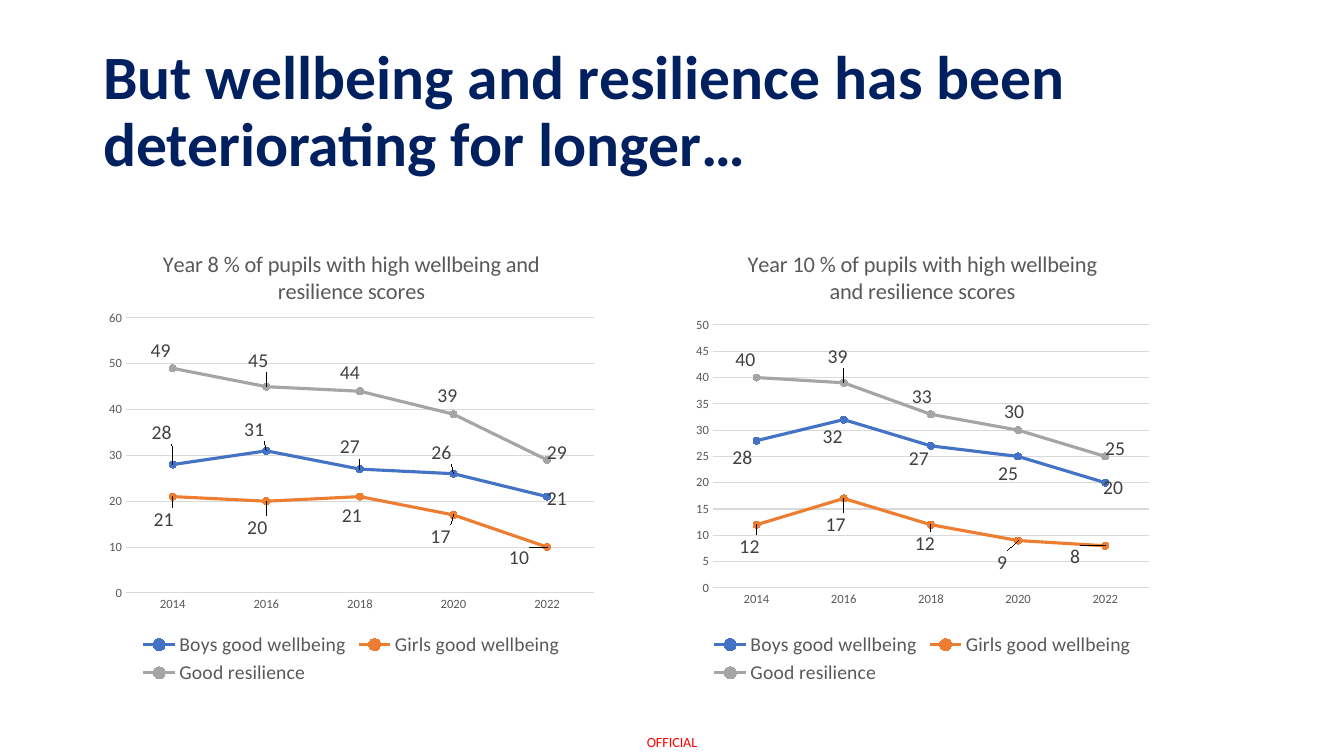
from lxml.etree import SubElement
from pptx import Presentation
from pptx.chart.data import CategoryChartData
from pptx.dml.color import RGBColor
from pptx.enum.chart import (XL_CHART_TYPE, XL_LABEL_POSITION, XL_LEGEND_POSITION,
                             XL_MARKER_STYLE, XL_TICK_MARK)
from pptx.enum.text import MSO_ANCHOR, MSO_AUTO_SIZE, PP_ALIGN
from pptx.oxml.ns import qn
from pptx.util import Emu, Pt

PX = 9071  # EMU per pixel
FONT = "Calibri"
NAVY = RGBColor(0x00, 0x20, 0x60)
RED = RGBColor(0xFF, 0x00, 0x00)
GREY = RGBColor(0x59, 0x59, 0x59)
LABEL_GREY = RGBColor(0x40, 0x40, 0x40)
GRID_GREY = RGBColor(0xD9, 0xD9, 0xD9)

TITLE = "But wellbeing and resilience has been deteriorating for longer…"
TITLE_BOX = (93, 40, 1159, 146)
MARKING = "OFFICIAL"
MARKING_BOX = (632, 727, 80, 29)
YEARS = ["2014", "2016", "2018", "2020", "2022"]
SERIES = [
    ("Boys good wellbeing", RGBColor(0x44, 0x72, 0xC4)),
    ("Girls good wellbeing", RGBColor(0xED, 0x7D, 0x31)),
    ("Good resilience", RGBColor(0xA5, 0xA5, 0xA5)),
]
# "plot" is px inside the chart; "labels" are px shifts of each label from its point
CHARTS = [
    {
        "title": "Year 8 % of pupils with high wellbeing and resilience scores",
        "box": (93, 230, 517, 459),
        "plot": (33, 88, 468, 275),
        "scale": (60, 10),
        "values": [(28, 31, 27, 26, 21), (21, 20, 21, 17, 10), (49, 45, 44, 39, 29)],
        "labels": [
            [(-11, -32), (-12, -21), (-10, -22), (-12, -21), (10, 2)],
            [(-9, 23), (-9, 26), (-8, 19), (-13, 22), (-28, 11)],
            [(-12, -18), (-8, -26), (-10, -19), (-6, -19), (10, -7)],
        ],
    },
    {
        "title": "Year 10 % of pupils with high wellbeing and resilience scores",
        "box": (680, 230, 485, 459),
        "plot": (33, 95, 436, 263),
        "scale": (50, 5),
        "values": [(28, 32, 27, 25, 20), (12, 17, 12, 9, 8), (40, 39, 33, 30, 25)],
        "labels": [
            [(-14, 17), (-11, 17), (-12, 13), (-10, 17), (8, 5)],
            [(-7, 22), (-8, 26), (-6, 19), (-16, 22), (-30, 11)],
            [(-11, -18), (-6, -26), (-9, -18), (-4, -18), (10, -8)],
        ],
    },
]


def to_emu(box):
    return [Emu(length * PX) for length in box]


def style_font(font, size, color, bold=False):
    font.name, font.size, font.bold = FONT, Pt(size), bold
    font.color.rgb = color


def style_line(line, color, width):
    line.color.rgb = color
    line.width = Pt(width)


def add_manual_layout(layout, settings):
    manual = SubElement(layout, qn("c:manualLayout"))
    for name, value in settings.items():
        SubElement(manual, qn(f"c:{name}")).set("val", str(value))


def place_plot(chart, plot, box):
    plot_area = chart.element.find(".//" + qn("c:plotArea"))
    layout = plot_area.find(qn("c:layout"))
    if layout is None:
        layout = SubElement(plot_area, qn("c:layout"))
        plot_area.insert(0, layout)
    left, top, width, height = plot
    add_manual_layout(layout, {
        "layoutTarget": "inner", "xMode": "edge", "yMode": "edge",
        "x": round(left / box[2], 4), "y": round(top / box[3], 4),
        "w": round(width / box[2], 4), "h": round(height / box[3], 4)})


def style_axes(chart, scale):
    for axis in (chart.category_axis, chart.value_axis):
        axis.major_tick_mark = axis.minor_tick_mark = XL_TICK_MARK.NONE
        style_font(axis.tick_labels.font, 9, GREY)
    style_line(chart.category_axis.format.line, GRID_GREY, 0.75)
    value_axis = chart.value_axis
    value_axis.format.line.fill.background()
    value_axis.minimum_scale = 0
    value_axis.maximum_scale, value_axis.major_unit = scale
    style_line(value_axis.major_gridlines.format.line, GRID_GREY, 0.75)


def style_series(series, color, shifts, box):
    series.smooth = False
    style_line(series.format.line, color, 2.25)
    marker = series.marker
    marker.style, marker.size = XL_MARKER_STYLE.CIRCLE, 5
    marker.format.fill.solid()
    marker.format.fill.fore_color.rgb = color
    style_line(marker.format.line, color, 0.75)

    series.data_labels.show_value = True
    style_font(series.data_labels.font, 14, LABEL_GREY)
    for index in range(len(shifts)):
        label = series.points[index].data_label
        style_font(label.font, 14, LABEL_GREY)
        label.position = XL_LABEL_POSITION.CENTER
    for label_element, (right, down) in zip(series.data_labels._element.findall(qn("c:dLbl")), shifts):
        layout = SubElement(label_element, qn("c:layout"))
        label_element.insert(1, layout)
        add_manual_layout(layout, {"x": round(right / box[2], 4), "y": round(down / box[3], 4)})


def add_line_chart(slide, content):
    data = CategoryChartData()
    data.categories = YEARS
    for (name, _), values in zip(SERIES, content["values"]):
        data.add_series(name, values)
    box = content["box"]
    chart = slide.shapes.add_chart(XL_CHART_TYPE.LINE_MARKERS, *to_emu(box), data).chart
    chart.font.name, chart.font.size = FONT, Pt(10)

    chart.has_title = True
    chart.chart_title.include_in_layout = False
    paragraph = chart.chart_title.text_frame.paragraphs[0]
    paragraph.text = content["title"]
    style_font(paragraph.runs[0].font, 16, GREY)

    chart.has_legend = True
    chart.legend.position = XL_LEGEND_POSITION.BOTTOM
    chart.legend.include_in_layout = False
    style_font(chart.legend.font, 14, GREY)

    style_axes(chart, content["scale"])
    place_plot(chart, content["plot"], box)
    chart.plots[0].vary_by_categories = False
    for series, (_, color), shifts in zip(chart.plots[0].series, SERIES, content["labels"]):
        style_series(series, color, shifts, box)


def add_title(slide):
    title = slide.shapes.title
    title.left, title.top, title.width, title.height = to_emu(TITLE_BOX)
    frame = title.text_frame
    frame.text = TITLE
    frame.vertical_anchor = MSO_ANCHOR.MIDDLE
    frame.auto_size = MSO_AUTO_SIZE.NONE
    paragraph = frame.paragraphs[0]
    paragraph.alignment = PP_ALIGN.LEFT
    paragraph.line_spacing = 0.9
    style_font(paragraph.runs[0].font, 44, NAVY, bold=True)


def add_marking(slide):
    frame = slide.shapes.add_textbox(*to_emu(MARKING_BOX)).text_frame
    frame.text = MARKING
    frame.word_wrap = True
    frame.vertical_anchor = MSO_ANCHOR.MIDDLE
    frame.margin_left = frame.margin_right = frame.margin_top = frame.margin_bottom = 0
    paragraph = frame.paragraphs[0]
    paragraph.alignment = PP_ALIGN.CENTER
    style_font(paragraph.runs[0].font, 10, RED)


def main():
    presentation = Presentation()
    presentation.slide_width, presentation.slide_height = to_emu((1344, 756))
    slide = presentation.slides.add_slide(presentation.slide_layouts[5])
    add_marking(slide)
    add_title(slide)
    for content in CHARTS:
        add_line_chart(slide, content)
    presentation.save("out.pptx")


if __name__ == "__main__":
    main()
